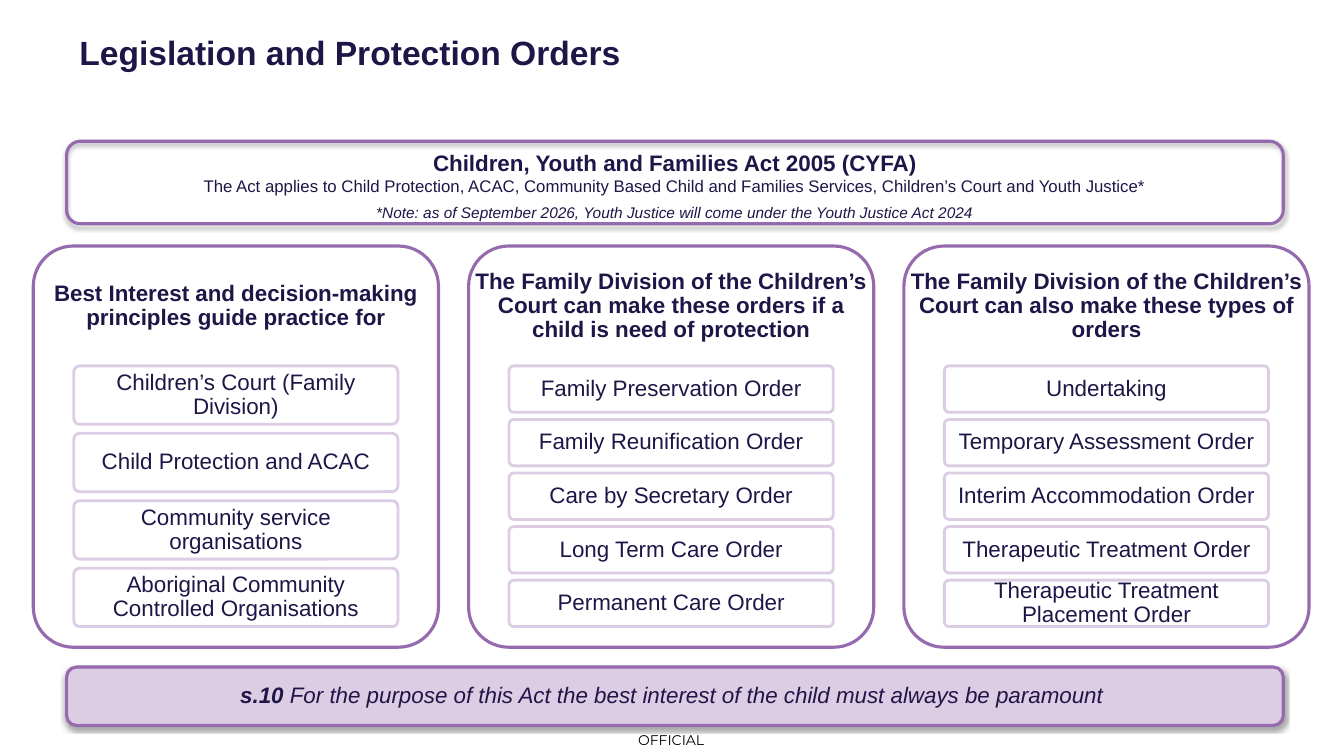
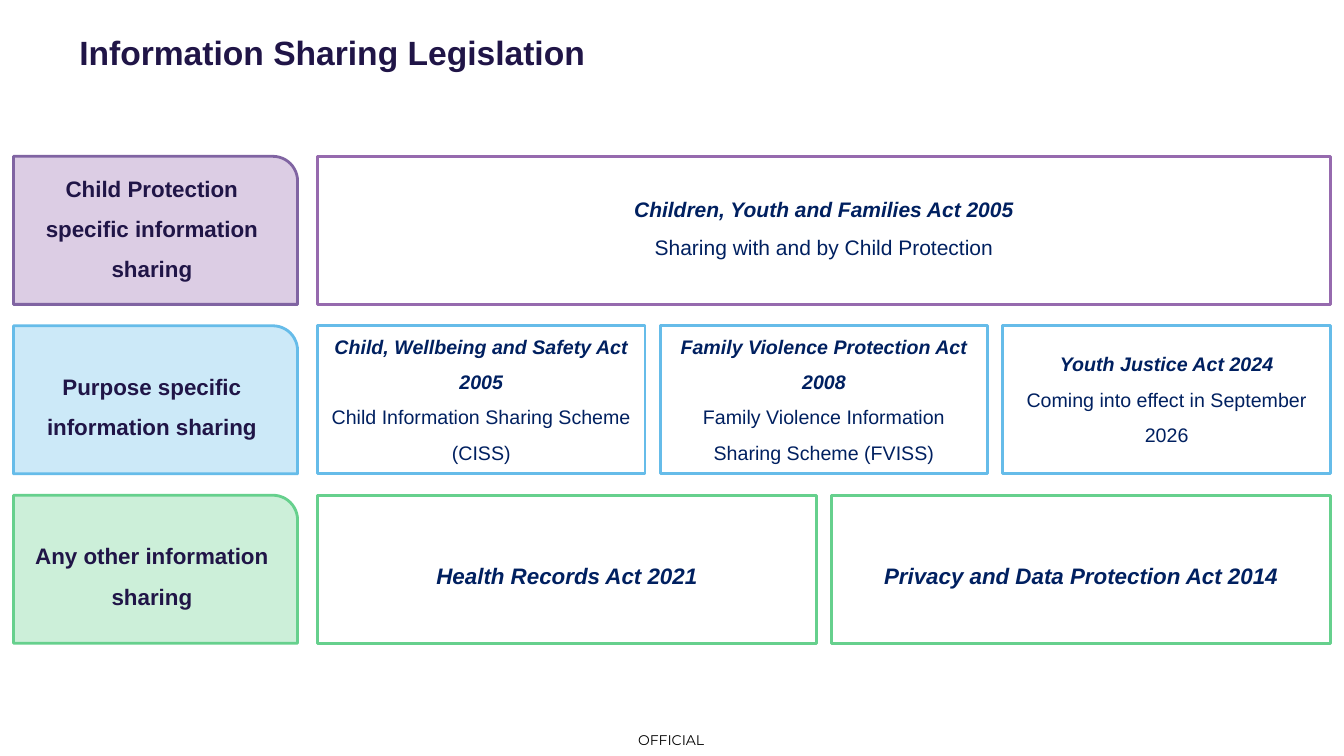
from lxml.etree import SubElement
from pptx import Presentation
from pptx.dml.color import RGBColor
from pptx.enum.shapes import MSO_SHAPE
from pptx.enum.text import MSO_ANCHOR, PP_ALIGN
from pptx.oxml.ns import qn
from pptx.util import Cm, Pt

COLOURS = {
    "ink": "201547", "navy": "002060", "black": "000000", "white": "FFFFFF",
    "purple": "966AAE", "violet": "8064A2", "lilac": "DCCDE4",
    "blue": "66BCE9", "pale blue": "CCE9F8",
    "green": "66D08D", "pale green": "CCEFD9",
}
BODY_FONT = "Arial"
FOOTER_FONT = "Montserrat"
INSETS = (0.25, 0.13, 0.25, 0.13)  # left, top, right, bottom in cm
NO_INSETS = (0, 0, 0, 0)

# Slide 1 layout, in cm
BANNER_LEFT, BANNER_WIDTH = 1.68, 30.66
PANEL_LEFT, PANEL_TOP, PANEL_STEP = 0.84, 6.2, 10.97
PANEL_WIDTH, PANEL_HEIGHT, HEADING_HEIGHT = 10.21, 10.11, 3.02
ITEM_INDENT, ITEMS_HEIGHT, ITEM_GAP_RATIO = 1.02, 6.57, 0.154

# Slide 2 layout, in cm
ROW_TOP, ROW_STEP, ROW_HEIGHT = 3.94, 4.27, 3.73
LABEL_LEFT, LABEL_WIDTH = 0.34, 7.16
ACTS_LEFT, ACTS_WIDTH, ACTS_GAP = 8, 25.53, 0.38

PANELS = [
    ("Best Interest and decision-making principles guide practice for",
     ["Children’s Court (Family Division)", "Child Protection and ACAC",
      "Community service organisations",
      "Aboriginal Community Controlled Organisations"]),
    ("The Family Division of the Children’s Court can make these orders "
     "if a child is need of protection",
     ["Family Preservation Order", "Family Reunification Order",
      "Care by Secretary Order", "Long Term Care Order",
      "Permanent Care Order"]),
    ("The Family Division of the Children’s Court can also make these "
     "types of orders",
     ["Undertaking", "Temporary Assessment Order",
      "Interim Accommodation Order", "Therapeutic Treatment Order",
      "Therapeutic Treatment Placement Order"]),
]

# Each row: label, label fill, label line, act line, label anchor,
# act text size, act anchor, act insets, acts (name, then details)
SHARING_ROWS = [
    ("Child Protection specific information sharing",
     "lilac", "violet", "purple", MSO_ANCHOR.TOP,
     15, MSO_ANCHOR.BOTTOM, (0.25, 0.13, 0.25, 1.13),
     [["Children, Youth and Families Act 2005",
       "Sharing with and by Child Protection"]]),
    ("Purpose specific information sharing",
     "pale blue", "blue", "blue", MSO_ANCHOR.MIDDLE,
     14, MSO_ANCHOR.MIDDLE, (0.25, 0.13, 0.25, 0.45),
     [["Child, Wellbeing and Safety Act 2005",
       "Child Information Sharing Scheme", "(CISS)"],
      ["Family Violence Protection Act 2008",
       "Family Violence Information Sharing Scheme (FVISS)"],
      ["Youth Justice Act 2024", "Coming into effect in September 2026"]]),
    ("Any other information sharing",
     "pale green", "green", "green", MSO_ANCHOR.MIDDLE,
     16, MSO_ANCHOR.MIDDLE, INSETS,
     [["Health Records Act 2021"], ["Privacy and Data Protection Act 2014"]]),
]


def colour(name):
    return RGBColor.from_string(COLOURS[name])


def set_frame(shape, anchor=MSO_ANCHOR.MIDDLE, insets=INSETS):
    frame = shape.text_frame
    frame.word_wrap = True
    frame.vertical_anchor = anchor
    (frame.margin_left, frame.margin_top,
     frame.margin_right, frame.margin_bottom) = [Cm(inset) for inset in insets]


def add_paragraph(shape, text, size=16, ink="ink", bold=False, italic=False,
                  spacing=None, before=None, align=PP_ALIGN.CENTER,
                  font=BODY_FONT):
    """Fill the first paragraph of the shape, or add one after it."""
    frame = shape.text_frame
    paragraph = frame.add_paragraph() if frame.text else frame.paragraphs[0]
    paragraph.text = text
    paragraph.alignment = align
    if spacing:
        paragraph.line_spacing = spacing
    if before:
        paragraph.space_before = Pt(before)
    paragraph.font.name = font
    paragraph.font.size = Pt(size)
    paragraph.font.bold = bold
    paragraph.font.italic = italic
    paragraph.font.color.rgb = colour(ink)
    return paragraph


def add_text_box(slide, left, top, width, height, **frame):
    box = slide.shapes.add_textbox(Cm(left), Cm(top), Cm(width), Cm(height))
    set_frame(box, **frame)
    return box


def add_box(slide, kind, left, top, width, height, line, fill=None,
            weight=2, corner=None, **frame):
    shape = slide.shapes.add_shape(kind, Cm(left), Cm(top),
                                   Cm(width), Cm(height))
    shape.shadow.inherit = False
    if fill:
        shape.fill.solid()
        shape.fill.fore_color.rgb = colour(fill)
    else:
        shape.fill.background()
    shape.line.color.rgb = colour(line)
    shape.line.width = Pt(weight)
    if corner is not None:
        shape.adjustments[0] = corner
    set_frame(shape, **frame)
    return shape


def add_shadow(shape):
    effects = shape.element.spPr.find(qn("a:effectLst"))
    shadow = SubElement(effects, qn("a:outerShdw"), blurRad=str(Pt(3.1)),
                        dist=str(Pt(1.8)), dir="5400000", rotWithShape="0")
    tint = SubElement(shadow, qn("a:srgbClr"), val=COLOURS["black"])
    SubElement(tint, qn("a:alpha"), val="35000")


def add_slide(presentation, title):
    """Start a slide with the shared footer marking and title."""
    slide = presentation.slides.add_slide(presentation.slide_layouts[6])
    footer = add_text_box(slide, 15.62, 18.26, 2.59, 0.79, insets=NO_INSETS)
    add_paragraph(footer, "OFFICIAL", 10, "black", font=FOOTER_FONT)
    heading = add_text_box(slide, 2, 0, 24, 2.5, insets=NO_INSETS)
    add_paragraph(heading, title, 24, bold=True, spacing=1.1,
                  align=PP_ALIGN.LEFT)
    return slide


def add_banner(slide, top, height, fill=None):
    banner = add_box(slide, MSO_SHAPE.ROUNDED_RECTANGLE, BANNER_LEFT, top,
                     BANNER_WIDTH, height, "purple", fill, weight=2.25,
                     insets=(0.25, 0.13, 0.4, 0.2))
    add_shadow(banner)
    return banner


def add_panel(slide, left, heading, items):
    """Rounded panel with a heading and an evenly spaced stack of items."""
    add_box(slide, MSO_SHAPE.ROUNDED_RECTANGLE, left, PANEL_TOP, PANEL_WIDTH,
            PANEL_HEIGHT, "purple", weight=2.25, corner=0.1)
    box = add_text_box(slide, left, PANEL_TOP, PANEL_WIDTH, HEADING_HEIGHT,
                       insets=(0.15, 0.18, 0.15, 0.18))
    add_paragraph(box, heading, bold=True, spacing=0.9)

    count = len(items)
    height = ITEMS_HEIGHT / (count + (count - 1) * ITEM_GAP_RATIO)
    for index, text in enumerate(items):
        top = PANEL_TOP + HEADING_HEIGHT + index * height * (1 + ITEM_GAP_RATIO)
        item = add_box(slide, MSO_SHAPE.ROUNDED_RECTANGLE, left + ITEM_INDENT,
                       top, PANEL_WIDTH - 2 * ITEM_INDENT, height, "lilac",
                       "white", corner=0.1, insets=(0.1, 0.08, 0.1, 0.08))
        add_paragraph(item, text, spacing=0.9)


def add_sharing_row(slide, top, label, label_fill, label_line, act_line,
                    label_anchor, size, act_anchor, act_insets, acts):
    """Coloured label, then acts that share the remaining width equally."""
    tab = add_box(slide, MSO_SHAPE.ROUND_1_RECTANGLE, LABEL_LEFT, top,
                  LABEL_WIDTH, ROW_HEIGHT, label_line, label_fill,
                  anchor=label_anchor)
    add_paragraph(tab, label, bold=True, spacing=1.5)

    width = (ACTS_WIDTH - (len(acts) - 1) * ACTS_GAP) / len(acts)
    for index, (name, *details) in enumerate(acts):
        card = add_box(slide, MSO_SHAPE.RECTANGLE,
                       ACTS_LEFT + index * (width + ACTS_GAP), top, width,
                       ROW_HEIGHT, act_line, "white", anchor=act_anchor,
                       insets=act_insets)
        add_paragraph(card, name, size, "navy", bold=True, italic=True,
                      spacing=1.5)
        for detail in details:
            add_paragraph(card, detail, size, "navy", spacing=1.5)


def build_orders_slide(presentation):
    slide = add_slide(presentation, "Legislation and Protection Orders")

    # Panels
    for index, (heading, items) in enumerate(PANELS):
        add_panel(slide, PANEL_LEFT + index * PANEL_STEP, heading, items)

    # Act at the top
    act = add_text_box(slide, BANNER_LEFT, 3.63, BANNER_WIDTH, 2.08,
                       anchor=MSO_ANCHOR.TOP)
    add_paragraph(act, "Children, Youth and Families Act 2005 (CYFA)",
                  bold=True)
    add_paragraph(act, "The Act applies to Child Protection, ACAC, Community "
                  "Based Child and Families Services, Children’s Court and "
                  "Youth Justice*", 12)
    add_paragraph(act, "*Note: as of September 2026, Youth Justice will come "
                  "under the Youth Justice Act 2024", 11, italic=True,
                  before=4.6)
    add_banner(slide, 3.56, 2.08)

    # Guiding principle at the bottom
    principle = add_banner(slide, 16.81, 1.47, "lilac")
    paragraph = add_paragraph(principle, "s.10 ", italic=True)
    paragraph.runs[0].font.bold = True
    paragraph.add_run().text = ("For the purpose of this Act the best interest "
                                "of the child must always be paramount")


def build_sharing_slide(presentation):
    slide = add_slide(presentation, "Information Sharing Legislation")
    for index, row in enumerate(SHARING_ROWS):
        add_sharing_row(slide, ROW_TOP + index * ROW_STEP, *row)


def main():
    presentation = Presentation()
    presentation.slide_width = Cm(33.87)
    presentation.slide_height = Cm(19.05)
    build_orders_slide(presentation)
    build_sharing_slide(presentation)
    presentation.save("out.pptx")


if __name__ == "__main__":
    main()
